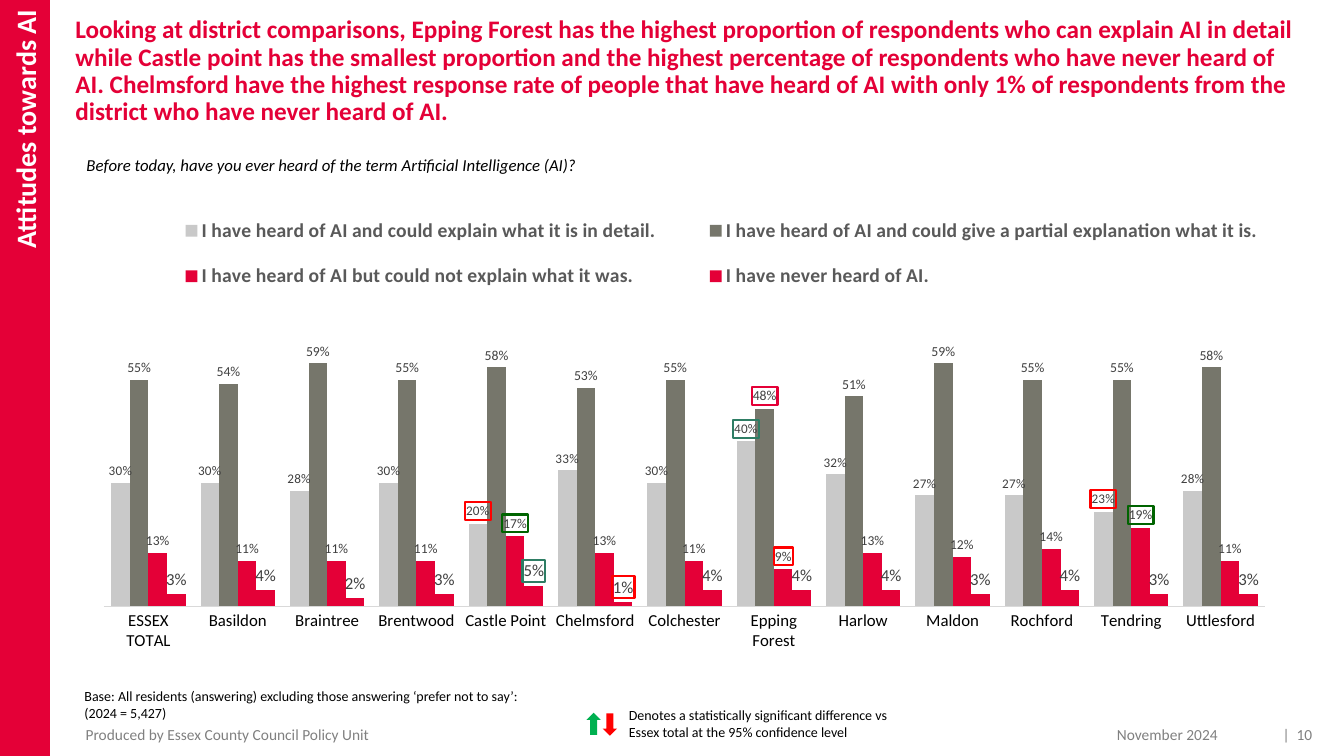
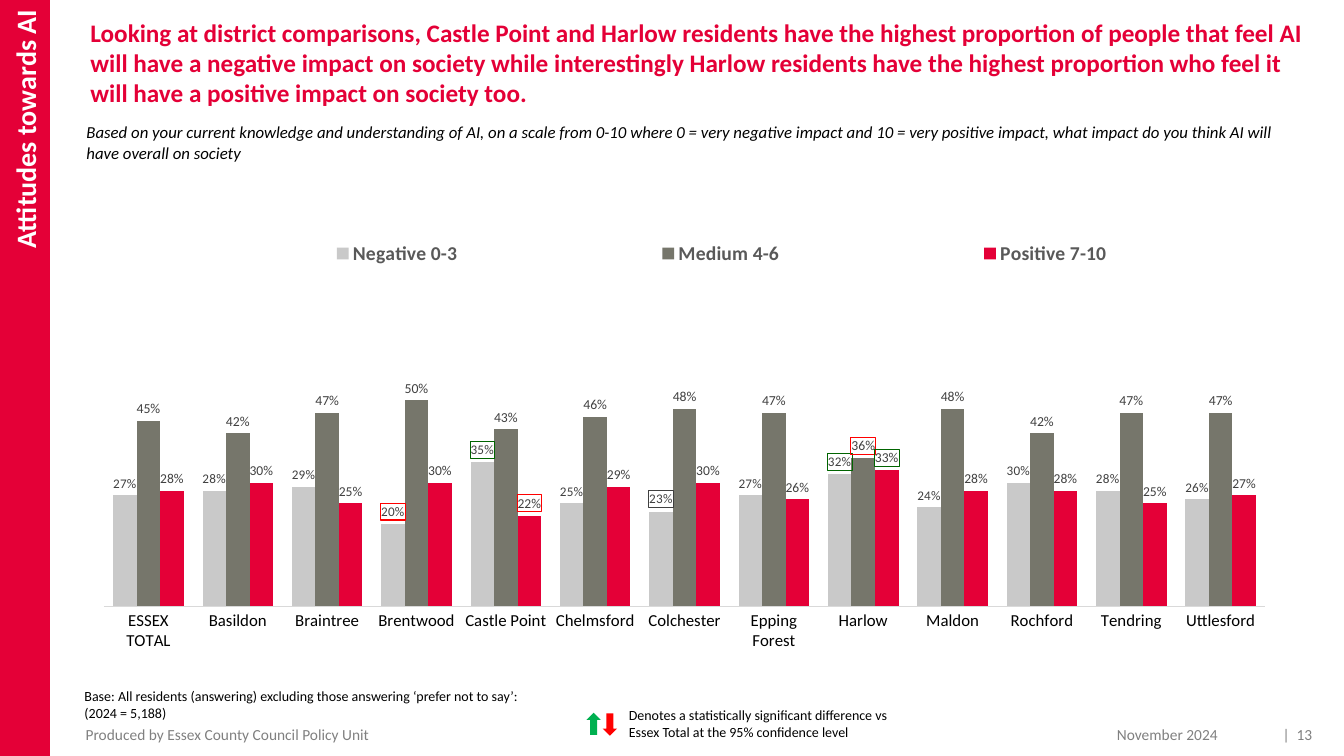
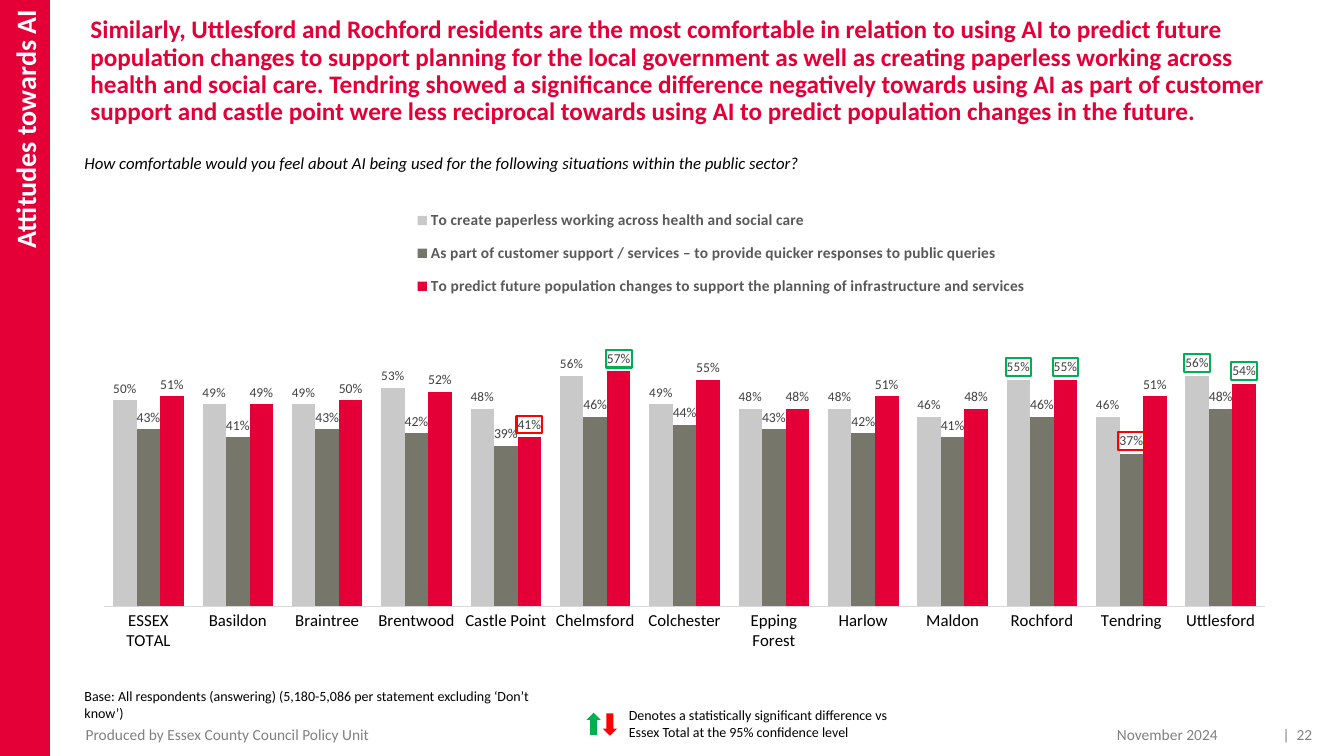
from dataclasses import dataclass

from pptx import Presentation
from pptx.chart.data import CategoryChartData
from pptx.dml.color import RGBColor
from pptx.enum.chart import XL_CHART_TYPE as ChartType
from pptx.enum.chart import XL_LABEL_POSITION as LabelPos
from pptx.enum.chart import XL_LEGEND_POSITION as LegendPos
from pptx.enum.chart import XL_TICK_MARK as Tick
from pptx.enum.shapes import MSO_SHAPE as Shape
from pptx.enum.text import MSO_ANCHOR as Anchor
from pptx.enum.text import PP_ALIGN as Align
from pptx.oxml import parse_xml
from pptx.oxml.ns import nsdecls
from pptx.util import Cm, Pt

FONT = "Calibri"
CRIMSON = RGBColor(0xE4, 0x00, 0x37)
SILVER = RGBColor(0xC9, 0xC9, 0xC9)
STONE = RGBColor(0x76, 0x76, 0x6B)
BLACK = RGBColor(0x00, 0x00, 0x00)
WHITE = RGBColor(0xFF, 0xFF, 0xFF)
FOOTER_GREY = RGBColor(0x80, 0x80, 0x80)
LEGEND_GREY = RGBColor(0x59, 0x59, 0x59)
LABEL_GREY = RGBColor(0x40, 0x40, 0x40)
AXIS_GREY = RGBColor(0xD9, 0xD9, 0xD9)
RED = RGBColor(0xFF, 0x00, 0x00)
GREEN = RGBColor(0x00, 0xB0, 0x50)
DARK_GREEN = RGBColor(0x00, 0x64, 0x00)
TEAL = RGBColor(0x2E, 0x7D, 0x64)

DISTRICTS = ["ESSEX TOTAL", "Basildon", "Braintree", "Brentwood", "Castle Point",
             "Chelmsford", "Colchester", "Epping Forest", "Harlow", "Maldon",
             "Rochford", "Tendring", "Uttlesford"]
SERIES_COLORS = [SILVER, STONE, CRIMSON, CRIMSON]
LABEL_SIZES = [9.4, 9.8, 9.7, 12]

Box = tuple[float, float, float, float]  # left, top, width, height in cm

# Areas inside the chart, in percent of its size
PLOT_AREA = (3.3, 2.4, 90.6, 84.3)
LEGEND_AREA = (6, 3, 91, 23)


@dataclass
class Answer:
    name: str
    percents: list[int]
    boxed: dict[str, RGBColor]  # district -> frame colour of its label


@dataclass
class Page:
    number: int
    title: str
    title_box: Box
    title_spacing: float
    question: str
    question_box: Box
    base: str
    total: str
    answers: list[Answer]
    legend_size: int = 14
    frame_width: float = 1.5


PAGES = [
    Page(
        10,
        "Looking at district comparisons, Epping Forest has the highest proportion of "
        "respondents who can explain AI in detail while Castle point has the smallest "
        "proportion and the highest percentage of respondents who have never heard of AI. "
        "Chelmsford have the highest response rate of people that have heard of AI with only "
        "1% of respondents from the district who have never heard of AI.",
        (1.65, 0.3, 31.47, 3), 0.9,
        "Before today, have you ever heard of the term Artificial Intelligence (AI)?",
        (1.93, 3.76, 30.66, 0.76),
        "Base: All residents (answering) excluding those answering ‘prefer not to say’: "
        "(2024 = 5,427)",
        "total",
        [
            Answer("I have heard of AI and could explain what it is in detail.",
                   [30, 30, 28, 30, 20, 33, 30, 40, 32, 27, 27, 23, 28],
                   {"Castle Point": RED, "Epping Forest": TEAL, "Tendring": RED}),
            Answer("I have heard of AI and could give a partial explanation what it is.",
                   [55, 54, 59, 55, 58, 53, 55, 48, 51, 59, 55, 55, 58],
                   {"Epping Forest": CRIMSON}),
            Answer("I have heard of AI but could not explain what it was.",
                   [13, 11, 11, 11, 17, 13, 11, 9, 13, 12, 14, 19, 11],
                   {"Castle Point": DARK_GREEN, "Epping Forest": RED,
                    "Tendring": DARK_GREEN}),
            Answer("I have never heard of AI.",
                   [3, 4, 2, 3, 5, 1, 4, 4, 4, 3, 4, 3, 3],
                   {"Castle Point": TEAL, "Chelmsford": RED}),
        ],
    ),
    Page(
        13,
        "Looking at district comparisons, Castle Point and Harlow residents have the highest "
        "proportion of people that feel AI will have a negative impact on society while "
        "interestingly Harlow residents have the highest proportion who feel it will have a "
        "positive impact on society too.",
        (2.03, 0.3, 31.12, 3), 1.0,
        "Based on your current knowledge and understanding of AI, on a scale from 0-10 where "
        "0 = very negative impact and 10 = very positive impact, what impact do you think AI "
        "will have overall on society",
        (1.93, 2.95, 30.66, 2.39),
        "Base: All residents (answering) excluding those answering ‘prefer not to say’: "
        "(2024 = 5,188)",
        "Total",
        [
            Answer("Negative 0-3",
                   [27, 28, 29, 20, 35, 25, 23, 27, 32, 24, 30, 28, 26],
                   {"Brentwood": RED, "Castle Point": DARK_GREEN,
                    "Colchester": LABEL_GREY, "Harlow": DARK_GREEN}),
            Answer("Medium 4-6",
                   [45, 42, 47, 50, 43, 46, 48, 47, 36, 48, 42, 47, 47],
                   {"Harlow": RED}),
            Answer("Positive 7-10",
                   [28, 30, 25, 30, 22, 29, 30, 26, 33, 28, 28, 25, 27],
                   {"Castle Point": RED, "Harlow": DARK_GREEN}),
        ],
        frame_width=0.75,
    ),
    Page(
        22,
        "Similarly, Uttlesford and Rochford residents are the most comfortable in relation to "
        "using AI to predict future population changes to support planning for the local "
        "government as well as creating paperless working across health and social care. "
        "Tendring showed a significance difference negatively towards using AI as part of "
        "customer support and castle point were less reciprocal towards using AI to predict "
        "population changes in the future.",
        (2.03, 0.3, 31.12, 3), 0.9,
        "How comfortable would you feel about AI being used for the following situations "
        "within the public sector?",
        (1.88, 3.71, 30.66, 0.76),
        "Base: All respondents (answering) (5,180-5,086 per statement excluding ‘Don’t know’)",
        "Total",
        [
            Answer("To create paperless working across health and social care",
                   [50, 49, 49, 53, 48, 56, 49, 48, 48, 46, 55, 46, 56],
                   {"Rochford": GREEN, "Uttlesford": GREEN}),
            Answer("As part of customer support / services – to provide quicker responses "
                   "to public queries",
                   [43, 41, 43, 42, 39, 46, 44, 43, 42, 41, 46, 37, 48],
                   {"Tendring": RED}),
            Answer("To predict future population changes to support the planning of "
                   "infrastructure and services",
                   [51, 49, 50, 52, 41, 57, 55, 48, 51, 48, 55, 51, 54],
                   {"Castle Point": RED, "Chelmsford": GREEN, "Rochford": GREEN,
                    "Uttlesford": GREEN}),
        ],
        legend_size=11,
    ),
]


def place(box: Box) -> list[Cm]:
    return [Cm(v) for v in box]


def style_font(font, size: float, color: RGBColor, bold=False, italic=False) -> None:
    font.name, font.size, font.bold, font.italic = FONT, Pt(size), bold, italic
    font.color.rgb = color


def write(s, text: str, size: float, color: RGBColor, bold=False, italic=False,
          align=Align.LEFT, anchor=Anchor.TOP, insets: Box = (0.25, 0.13, 0.25, 0.13)):
    """Fill a shape with one styled paragraph; insets are left, top, right, bottom."""
    tf = s.text_frame
    tf.word_wrap = True
    tf.vertical_anchor = anchor
    tf.margin_left, tf.margin_top, tf.margin_right, tf.margin_bottom = place(insets)
    p = tf.paragraphs[0]
    p.alignment = align
    r = p.add_run()
    r.text = text
    style_font(r.font, size, color, bold, italic)
    return p


def add_text(sp, box: Box, text: str, size: float, color: RGBColor, **options):
    return write(sp.add_textbox(*place(box)), text, size, color, **options)


def add_filled(sp, kind: Shape, box: Box, color: RGBColor):
    s = sp.add_shape(kind, *place(box))
    s.shadow.inherit = False
    s.fill.solid()
    s.fill.fore_color.rgb = color
    s.line.fill.background()
    return s


def add_frame(sp, page: Page) -> None:
    """Draw the side band, footer and significance key found on every slide."""
    band = add_filled(sp, Shape.RECTANGLE, (0, 0, 1.26, 19.05), CRIMSON)
    write(band, "Attitudes towards AI", 20, WHITE, bold=True, align=Align.RIGHT,
          anchor=Anchor.MIDDLE, insets=(0.25, 0.25, 0.25, 0.13))
    band.element.xpath(".//a:bodyPr")[0].set("vert", "vert270")

    # Divider and page number are separate so that each keeps its own edge
    for left, width, text in [(32.2, 0.3, "|"), (32.4, 0.67, str(page.number))]:
        add_text(sp, (left, 18.31, width, 0.38), text, 11, FOOTER_GREY, align=Align.RIGHT,
                 anchor=Anchor.MIDDLE, insets=(0, 0.13, 0, 0.13))
    add_text(sp, (1.93, 18.31, 16.61, 0.38), "Produced by Essex County Council Policy Unit",
             11, FOOTER_GREY, anchor=Anchor.MIDDLE, insets=(0.23, 0.13, 0.25, 0.13))
    add_text(sp, (24.59, 18.31, 6.1, 0.38), "November 2024", 11, FOOTER_GREY,
             align=Align.RIGHT, anchor=Anchor.MIDDLE, insets=(0.25, 0.13, 0, 0.13))
    add_text(sp, (15.6, 17.68, 7.29, 1.12),
             f"Denotes a statistically significant difference vs Essex {page.total} "
             "at the 95% confidence level", 10, BLACK)
    add_filled(sp, Shape.UP_ARROW, (14.78, 17.96, 0.36, 0.56), GREEN)
    add_filled(sp, Shape.DOWN_ARROW, (15.19, 17.98, 0.36, 0.56), RED)


def manual_layout(area: Box, inner: bool = False):
    x, y, w, h = (v / 100 for v in area)
    target = '<c:layoutTarget val="inner"/>' if inner else ""
    return parse_xml(
        f'<c:layout {nsdecls("c")}><c:manualLayout>{target}'
        '<c:xMode val="edge"/><c:yMode val="edge"/>'
        f'<c:x val="{x}"/><c:y val="{y}"/><c:w val="{w}"/><c:h val="{h}"/>'
        '</c:manualLayout></c:layout>')


def framed_label(index: int, color: RGBColor, width: float, size: float):
    return parse_xml(
        f'<c:dLbl {nsdecls("c", "a")}><c:idx val="{index}"/>'
        '<c:numFmt formatCode="0%" sourceLinked="0"/>'
        f'<c:spPr><a:noFill/><a:ln w="{Pt(width)}"><a:solidFill><a:srgbClr val="{color}"/>'
        '</a:solidFill></a:ln></c:spPr>'
        f'<c:txPr><a:bodyPr/><a:p><a:pPr><a:defRPr sz="{round(size * 100)}" b="0"><a:solidFill>'
        f'<a:srgbClr val="{LABEL_GREY}"/></a:solidFill><a:latin typeface="{FONT}"/>'
        '</a:defRPr></a:pPr><a:endParaRPr lang="en-GB"/></a:p></c:txPr>'
        '<c:dLblPos val="outEnd"/><c:showLegendKey val="0"/><c:showVal val="1"/>'
        '<c:showCatName val="0"/><c:showSerName val="0"/><c:showPercent val="0"/>'
        '<c:showBubbleSize val="0"/></c:dLbl>')


def add_district_chart(sp, page: Page) -> None:
    data = CategoryChartData(number_format="0%")
    data.categories = DISTRICTS
    for answer in page.answers:
        data.add_series(answer.name, [v / 100 for v in answer.percents])
    box = place((1.55, 4.6, 32.31, 12.32))
    chart = sp.add_chart(ChartType.COLUMN_CLUSTERED, *box, data).chart
    chart.has_title = False
    style_font(chart.font, 10, BLACK)

    axis = chart.category_axis
    axis.major_tick_mark = Tick.NONE
    style_font(axis.tick_labels.font, 12, BLACK)
    axis.format.line.color.rgb = AXIS_GREY
    axis.format.line.width = Pt(0.75)
    values = chart.value_axis
    values.minimum_scale, values.maximum_scale, values.major_unit = 0, 1, 0.2
    values.has_major_gridlines = False
    values.visible = False

    chart.has_legend = True
    chart.legend.position = LegendPos.TOP
    chart.legend.include_in_layout = False
    style_font(chart.legend.font, page.legend_size, LEGEND_GREY, bold=True)
    root = chart.element
    for old in root.xpath(".//c:legend/c:layout | .//c:plotArea/c:layout"):
        old.getparent().remove(old)
    root.xpath(".//c:legendPos")[0].addnext(manual_layout(LEGEND_AREA))
    root.xpath(".//c:plotArea")[0].insert(0, manual_layout(PLOT_AREA, inner=True))

    plot = chart.plots[0]
    plot.gap_width, plot.overlap, plot.vary_by_categories = 80, 0, False
    styles = zip(plot.series, page.answers, SERIES_COLORS, LABEL_SIZES)
    for i, (series, answer, color, size) in enumerate(styles):
        series.format.fill.solid()
        series.format.fill.fore_color.rgb = color
        labels = series.data_labels
        labels.show_value = True
        labels.position = LabelPos.OUTSIDE_END
        labels.number_format, labels.number_format_is_linked = "0%", False
        style_font(labels.font, size, LABEL_GREY)
        label_list = root.xpath(".//c:ser")[i].xpath("./c:dLbls")[0]
        for n, (district, frame) in enumerate(answer.boxed.items()):
            index = DISTRICTS.index(district)
            label_list.insert(n, framed_label(index, frame, page.frame_width, size))


def add_page(prs, page: Page) -> None:
    sp = prs.slides.add_slide(prs.slide_layouts[6]).shapes
    add_frame(sp, page)
    add_text(sp, (1.88, 17.2, 12.22, 1.12), page.base, 10, BLACK)
    add_text(sp, page.question_box, page.question, 12, BLACK, italic=True)
    title = add_text(sp, page.title_box, page.title, 18, CRIMSON, bold=True,
                     insets=(0.25, 0.13, 0.25, 0))
    title.line_spacing = page.title_spacing
    add_district_chart(sp, page)


def main() -> None:
    prs = Presentation()
    prs.slide_width, prs.slide_height = Cm(33.87), Cm(19.05)
    for page in PAGES:
        add_page(prs, page)
    prs.save("out.pptx")


if __name__ == "__main__":
    main()
